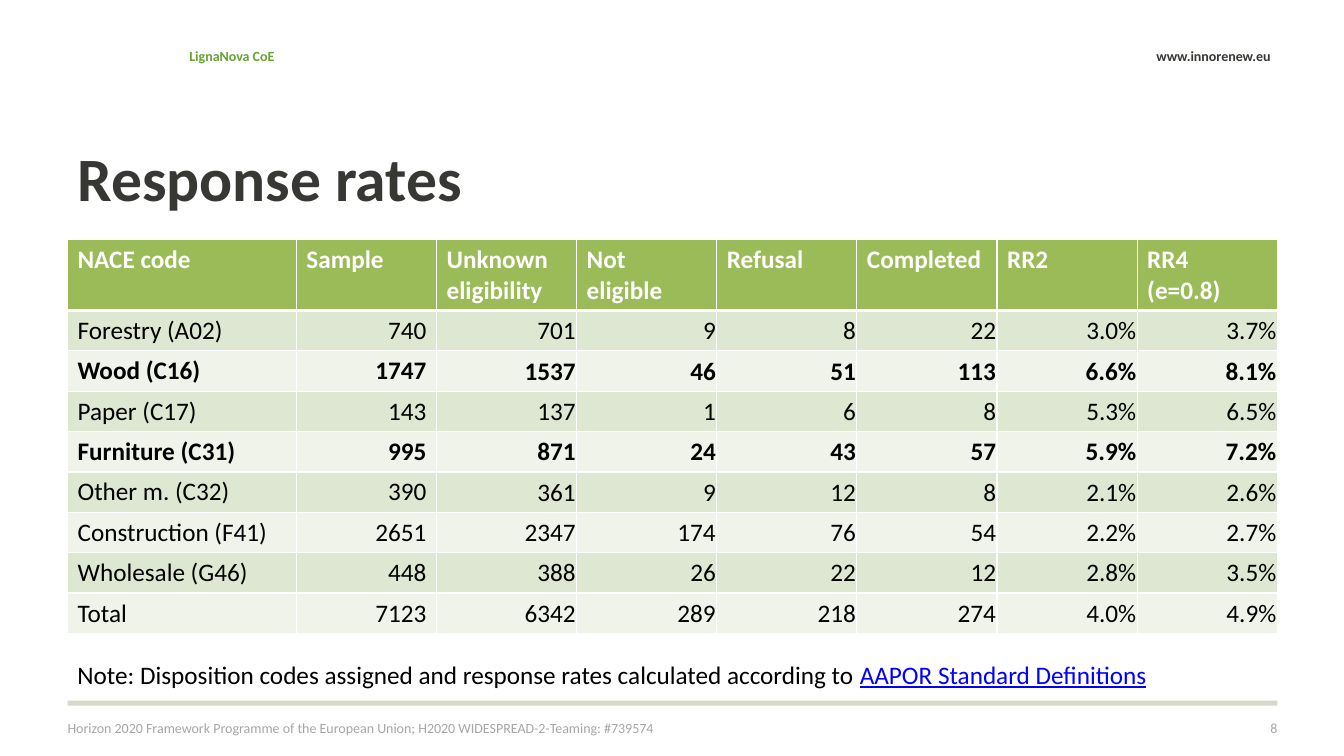
from lxml import etree
from pptx import Presentation
from pptx import util as u
from pptx.dml.color import RGBColor
from pptx.enum import shapes, text

WHITE = RGBColor(0xFF, 0xFF, 0xFF)
BLACK = RGBColor(0x00, 0x00, 0x00)
DARK = RGBColor(0x37, 0x37, 0x34)
GREY = RGBColor(0xA6, 0xA6, 0xA6)
GREEN = RGBColor(0x67, 0xA3, 0x32)
HEAD = RGBColor(0x9B, 0xBB, 0x59)
BANDS = RGBColor(0xDE, 0xE7, 0xD1), RGBColor(0xEF, 0xF3, 0xEA)
RULE = RGBColor(0xD6, 0xDA, 0xC8)
LINK = RGBColor(0x00, 0x00, 0xFF)

LEFT, RIGHT = text.PP_ALIGN.LEFT, text.PP_ALIGN.RIGHT
TOP, MID, LOW = (text.MSO_ANCHOR.TOP, text.MSO_ANCHOR.MIDDLE,
                 text.MSO_ANCHOR.BOTTOM)
NS = "http://schemas.openxmlformats.org/drawingml/2006/main"

HEADS = ["NACE code", "Sample", "Unknown eligibility", "Not eligible",
         "Refusal", "Completed", "RR2", "RR4\n(e=0.8)"]
RATES = [
    ["Forestry (A02)", "740", "701", "9", "8", "22", "3.0%", "3.7%"],
    ["Wood (C16)", "1747", "1537", "46", "51", "113", "6.6%", "8.1%"],
    ["Paper (C17)", "143", "137", "1", "6", "8", "5.3%", "6.5%"],
    ["Furniture (C31)", "995", "871", "24", "43", "57", "5.9%", "7.2%"],
    ["Other m. (C32)", "390", "361", "9", "12", "8", "2.1%", "2.6%"],
    ["Construction (F41)", "2651", "2347", "174", "76", "54", "2.2%", "2.7%"],
    ["Wholesale (G46)", "448", "388", "26", "22", "12", "2.8%", "3.5%"],
    ["Total", "7123", "6342", "289", "218", "274", "4.0%", "4.9%"],
]
STRONG = {"Wood (C16)", "Furniture (C31)"}


def put(item, form):
    for key, val in form.items():
        setattr(item, key, val)


class Deck:
    """Draws the elements of one slide in a shared style."""

    def __init__(self, face):
        self.face = face
        self.show = Presentation()
        put(self.show, {"slide_width": u.Inches(13.33),
                        "slide_height": u.Inches(7.5)})
        self.slide = self.show.slides.add_slide(self.show.slide_layouts[6])

    def style(self, font, size, color, **form):
        put(font, {"name": self.face, "size": u.Pt(size), **form})
        font.color.rgb = color

    def bar(self, spot, color):
        box = self.slide.shapes.add_shape(
            shapes.MSO_SHAPE.RECTANGLE, *map(u.Inches, spot))
        box.shadow.inherit = False
        box.fill.solid()
        box.fill.fore_color.rgb = color
        box.line.fill.background()

    def label(self, spot, runs, size, align=LEFT, anchor=MID, side=0.1):
        frame = self.slide.shapes.add_textbox(*map(u.Inches, spot)).text_frame
        put(frame, {"word_wrap": True, "vertical_anchor": anchor,
                    "margin_left": u.Inches(side),
                    "margin_right": u.Inches(side)})
        para = frame.paragraphs[0]
        para.alignment = align
        for words, color, form in runs:
            run = para.add_run()
            run.text = words
            self.style(run.font, size, color, **form)

    def edge(self, cell, widths):
        props = cell._tc.get_or_add_tcPr()
        for side, width in zip("LRTB", widths):
            line = etree.SubElement(props, f"{{{NS}}}ln{side}",
                                    w=str(u.Pt(width)))
            fill = etree.SubElement(line, f"{{{NS}}}solidFill")
            etree.SubElement(fill, f"{{{NS}}}srgbClr", val=str(WHITE))

    def cell(self, cell, words, fill, color, bold, align, widths):
        self.edge(cell, widths)
        cell.fill.solid()
        cell.fill.fore_color.rgb = fill
        cell.text_frame.text = words
        for para in cell.text_frame.paragraphs:
            para.alignment = align
            for run in para.runs:
                self.style(run.font, 18, color, bold=bold)

    def table(self, spot, heads, rows, first, rest):
        grid = self.slide.shapes.add_table(
            len(rows) + 1, len(heads), *map(u.Inches, spot)).table
        put(grid, {"first_row": False, "horz_banding": False})
        for num, col in enumerate(grid.columns):
            col.width = u.Inches(rest if num else first)
        for num, row in enumerate(grid.rows):
            row.height = u.Inches(0.4 if num else 0.7)
        for num, head in enumerate(heads):
            self.cell(grid.cell(0, num), head, HEAD, WHITE, True, LEFT,
                      (1, 1, 1, 3))
        tight = {"vertical_anchor": MID, "margin_left": u.Inches(0.01),
                 "margin_right": u.Inches(0.01),
                 "margin_top": u.Inches(0.01), "margin_bottom": 0}
        for row, vals in enumerate(rows):
            for col, val in enumerate(vals):
                cell = grid.cell(row + 1, col)
                self.cell(cell, val, BANDS[row % 2], BLACK,
                          vals[0] in STRONG, RIGHT if col else LEFT,
                          (1, 1, 1 if row else 3, 1))
                if col > 1:
                    put(cell, tight)

    def save(self):
        self.show.save("out.pptx")


def main():
    deck = Deck("Calibri")
    bold = {"bold": True}
    deck.bar((0.67, 6.95, 12, 0.05), RULE)
    deck.label((9.56, 0.2, 3.14, 0.71), [("www.innorenew.eu", DARK, bold)],
               10, RIGHT)
    deck.label((1.78, 0.2, 3.14, 0.71), [("LignaNova CoE", GREEN, bold)], 10)
    deck.label((0.67, 1.13, 12, 1.25), [("Response rates", DARK, bold)], 44)
    deck.label((0.67, 6.95, 8.26, 0.4), [
        ("Horizon 2020 Framework Programme of the European Union; "
         "H2020 WIDESPREAD-2-Teaming: #739574", GREY, {})],
        10, anchor=LOW, side=0)
    deck.label((9.56, 6.95, 3.11, 0.4), [("8", GREY, {})], 10, RIGHT, LOW, 0)
    deck.table((0.67, 2.38, 12, 3.9), HEADS, RATES, 2.27, 1.39)
    deck.label((0.67, 6.49, 12, 0.4), [
        ("Note: Disposition codes assigned and response rates calculated "
         "according to ", BLACK, {}),
        ("AAPOR Standard Definitions", LINK, {"underline": True})],
        18, anchor=TOP)
    deck.save()


if __name__ == "__main__":
    main()
